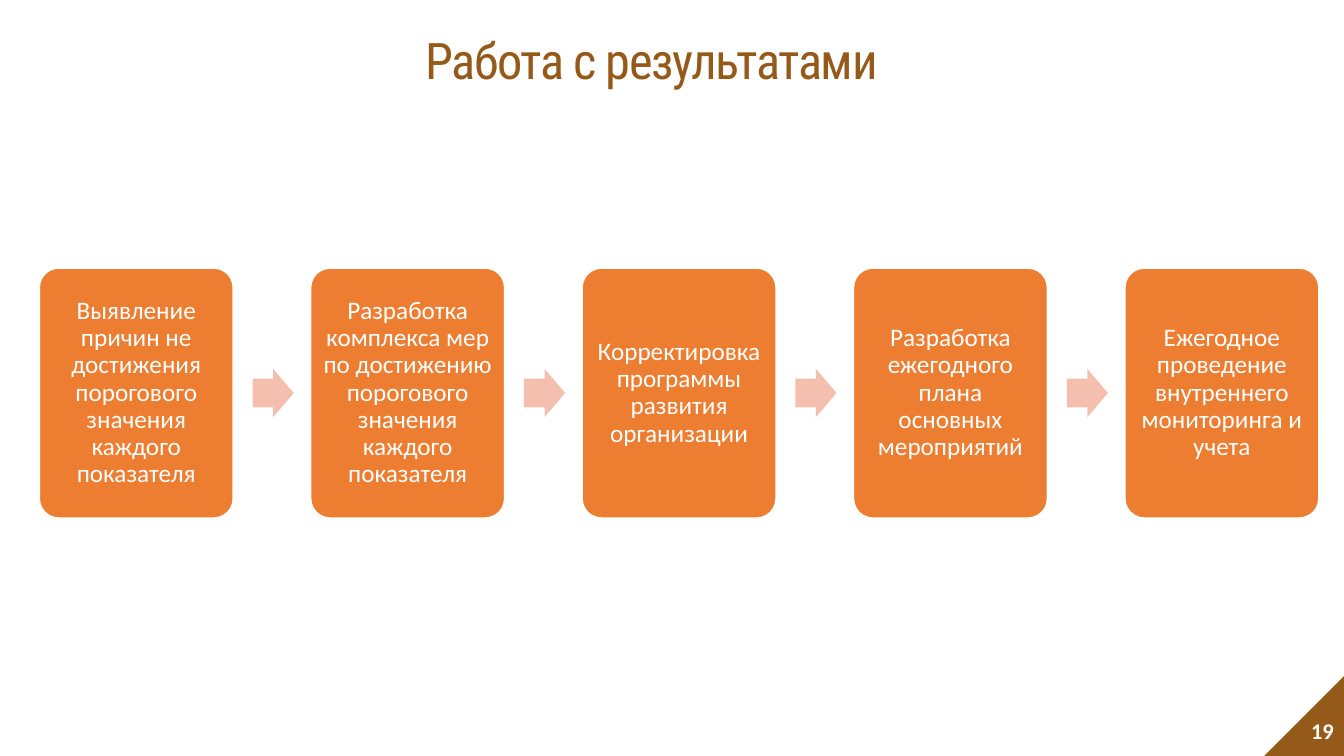
from pptx import Presentation
from pptx.dml.color import RGBColor
from pptx.enum.shapes import MSO_SHAPE
from pptx.enum.text import MSO_ANCHOR, MSO_AUTO_SIZE, PP_ALIGN
from pptx.util import Pt

BROWN, ORANGE, PEACH, WHITE = "955A1A", "ED7D31", "F4BFAE", "FFFFFF"
STAGES = [
    "Выявление причин не достижения порогового значения каждого показателя",
    "Разработка комплекса мер по достижению порогового значения каждого показателя",
    "Корректировка программы развития организации",
    "Разработка ежегодного плана основных мероприятий",
    "Ежегодное проведение внутреннего мониторинга и учета",
]


def color(hex_value):
    return RGBColor.from_string(hex_value)


class ProcessSlide:
    heading_font = "Roboto Condensed"
    body_font = "Calibri"

    def __init__(self, deck):
        self.slide = deck.slides.add_slide(deck.slide_layouts[5])

    def add_text(self, frame, text, size, font, hex_value, align, inset, bold=False, leading=None):
        frame.word_wrap = True
        frame.auto_size = MSO_AUTO_SIZE.NONE
        frame.vertical_anchor = MSO_ANCHOR.MIDDLE
        frame.margin_left = frame.margin_right = Pt(inset[0])
        frame.margin_top = frame.margin_bottom = Pt(inset[1])
        paragraph = frame.paragraphs[0]
        paragraph.alignment = align
        if leading:
            paragraph.line_spacing = leading
        run = paragraph.add_run()
        run.text = text
        run.font.size = Pt(size)
        run.font.name = font
        run.font.bold = bold
        run.font.color.rgb = color(hex_value)
        return run

    def title(self, text, left, top, width, height):
        heading = self.slide.shapes.title
        heading.left, heading.top = Pt(left), Pt(top)
        heading.width, heading.height = Pt(width), Pt(height)
        run = self.add_text(heading.text_frame, text, 36, self.heading_font, BROWN,
                            PP_ALIGN.CENTER, (7.2, 3.6), leading=0.9)
        run._r.get_or_add_rPr().set("spc", "-100")

    def shape(self, preset, left, top, width, height, fill, adjustments=()):
        figure = self.slide.shapes.add_shape(preset, Pt(left), Pt(top), Pt(width), Pt(height))
        figure.shadow.inherit = False
        figure.fill.solid()
        figure.fill.fore_color.rgb = color(fill)
        figure.line.fill.background()
        for index, value in enumerate(adjustments):
            figure.adjustments[index] = value
        return figure

    def stage(self, text, left, top, width, height):
        card = self.shape(MSO_SHAPE.ROUNDED_RECTANGLE, left, top, width, height, ORANGE, [0.1])
        card.line.color.rgb = color(WHITE)
        card.line.width = Pt(1)
        self.add_text(card.text_frame, text, 18, self.body_font, WHITE,
                      PP_ALIGN.CENTER, (5, 5), leading=0.9)

    def arrow(self, left, middle, width, height):
        self.shape(MSO_SHAPE.RIGHT_ARROW, left, middle - height / 2, width, height,
                   PEACH, [0.6, 0.5])

    def page_number(self, text):
        corner = self.shape(MSO_SHAPE.RIGHT_TRIANGLE, 903, 483, 57, 57, BROWN)
        corner.rotation = 270
        number = self.slide.shapes.add_textbox(Pt(743.8), Pt(507.6), Pt(216), Pt(28.8))
        self.add_text(number.text_frame, text, 16, self.body_font, WHITE,
                      PP_ALIGN.RIGHT, (7.2, 3.6), bold=True)


def main():
    deck = Presentation()
    deck.slide_width, deck.slide_height = Pt(960), Pt(540)
    process = ProcessSlide(deck)
    process.page_number("19")
    process.title("Работа с результатами", 36.7, 16.6, 857.5, 57.6)

    start, top, width, height = 28.1, 191.5, 138.47, 178.5
    for index, text in enumerate(STAGES):
        left = start + index * width * 1.4
        if index:
            process.arrow(left - width * 0.3, top + height / 2, 29.4, 34.4)
        process.stage(text, left, top, width, height)

    deck.save("out.pptx")


if __name__ == "__main__":
    main()
